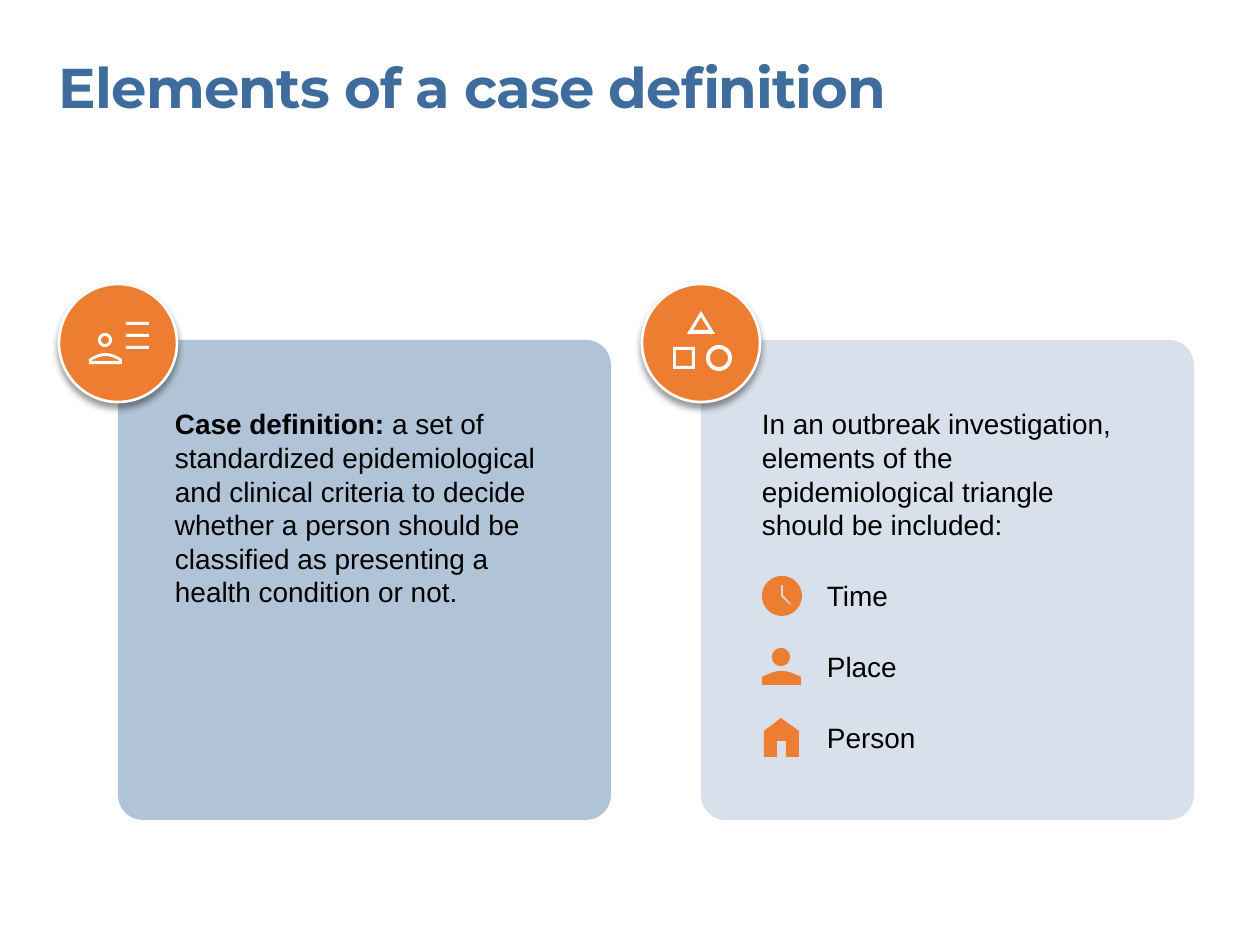
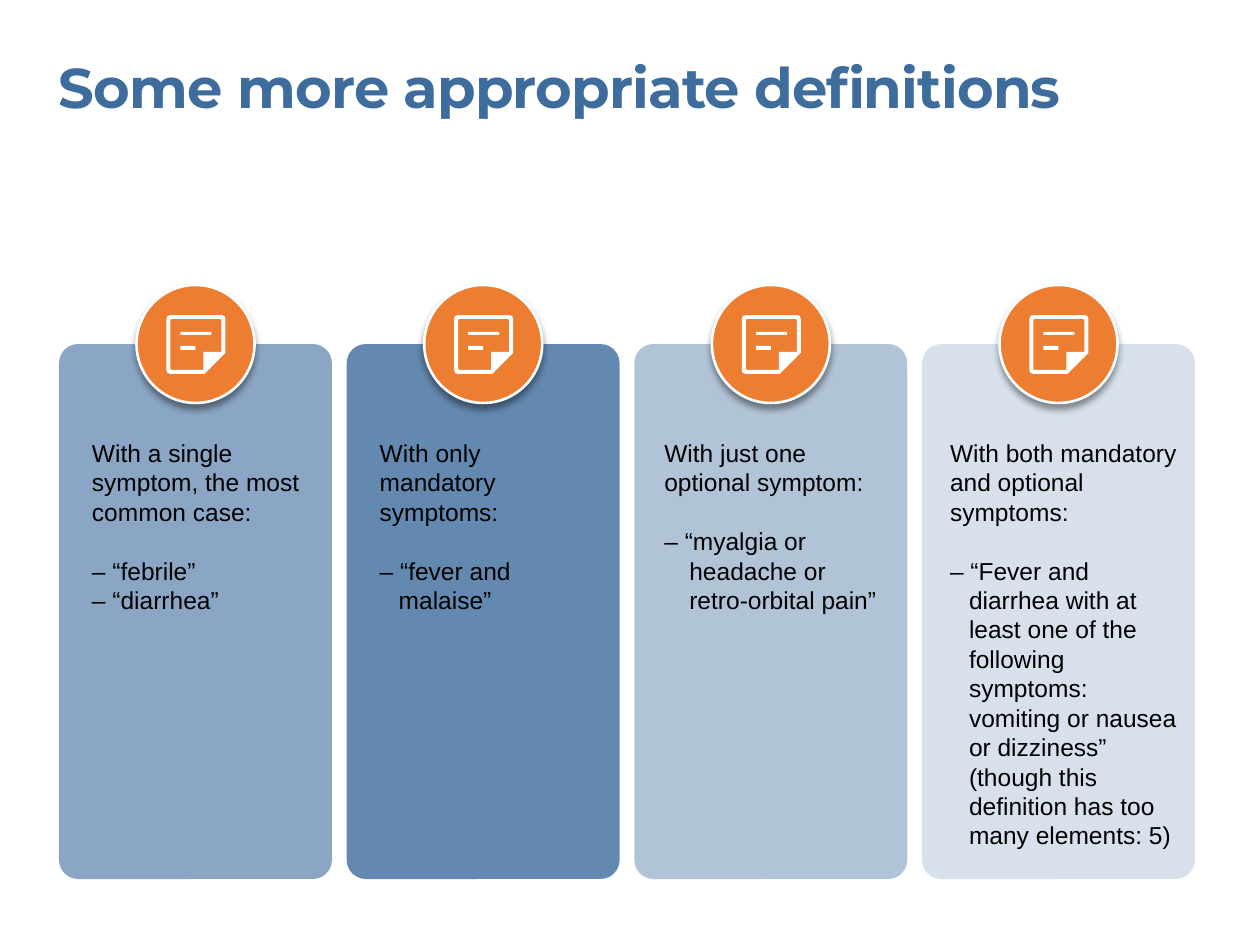
from math import cos, pi, sin

from lxml.etree import SubElement
from pptx import Presentation
from pptx.dml.color import RGBColor
from pptx.enum.shapes import MSO_SHAPE
from pptx.oxml.ns import qn
from pptx.util import Emu, Pt

EMU_PER_PX = 914400 / 126
BLUE = RGBColor(0x3D, 0x6C, 0x9D)
ORANGE = RGBColor(0xED, 0x7D, 0x31)
WHITE = RGBColor(0xFF, 0xFF, 0xFF)
BLACK = RGBColor(0, 0, 0)

TITLE_FONT = {"name": "Montserrat", "size": Pt(32), "bold": True}
BODY_FONT = {"name": "Arial", "bold": False}
BADGE = 118


def px(n):
    return Emu(round(n * EMU_PER_PX))


# Outlines: lists of points in px

def rect(x, y, w, h):
    return [(x, y), (x + w, y), (x + w, y + h), (x, y + h)]


def disc(cx, cy, r, steps=40):
    angles = [2 * pi * i / steps for i in range(steps)]
    return [(cx + r * cos(a), cy + r * sin(a)) for a in angles]


def dome(x, y, w, h, rise, steps=20):
    """Block whose top edge bulges upwards by rise."""
    top = [(x + w * i / steps, y + rise * (1 - sin(pi * i / steps)))
           for i in range(steps + 1)]
    return [(x, y + h)] + top + [(x + w, y + h)]


PERSON_LIST = [
    *(rect(67, y, 23, 3) for y in (38, 50, 62)),
    disc(46, 56, 7), disc(46, 56, 4),
    dome(30, 69, 33, 11, 6), dome(33, 72, 27, 5, 4),
]
BASIC_SHAPES = [
    [(45, 50), (59, 27), (73, 50)], [(51, 46), (59, 33), (67, 46)],
    disc(77, 74, 13), disc(77, 74, 9),
    rect(31, 63, 22, 22), rect(34, 66, 16, 16),
]
NOTE = [
    [(34, 89), (31, 88), (30, 85), (30, 34), (31, 31), (34, 30), (85, 30),
     (88, 31), (89, 34), (89, 68), (68, 89)],
    [(35, 85), (34, 84), (34, 35), (35, 34), (84, 34), (85, 35), (85, 67),
     (67, 67), (67, 85)],
    rect(44, 61, 15, 4), rect(44, 47, 31, 3),
]
CLOCK = [
    disc(20, 21, 20),
    [(28, 30), (29, 29), (21, 20), (21, 10), (19, 10), (19, 21)],
]
BUST = [disc(19, 11, 9), dome(0, 25, 39, 14, 6)]
HOUSE = [[(2, 40), (2, 14), (19, 1), (37, 14), (37, 40), (24, 40),
          (24, 24), (15, 24), (15, 40)]]

TRIANGLE_ROWS = [("Time", CLOCK), ("Place", BUST), ("Person", HOUSE)]

# Opacity, text inset, text width, hanging indent, heading, examples
DEFINITIONS = [
    (60, 33, 212, 0, "With a single symptom, the most common case:",
     ["– “febrile”", "– “diarrhea”"]),
    (80, 33, 208, 19, "With only mandatory symptoms:",
     ["– “fever and malaise”"]),
    (40, 30, 218, 25, "With just one optional symptom:",
     ["– “myalgia or headache or retro-orbital pain”"]),
    (20, 28, 233, 19, "With both mandatory and optional symptoms:",
     ["– “Fever and diarrhea with at least one of the following symptoms: "
      "vomiting or nausea or dizziness” (though this definition has too "
      "many elements: 5)"]),
]


def add_text_box(s, x, y, w, h):
    tf = s.shapes.add_textbox(px(x), px(y), px(w), px(h)).text_frame
    tf.word_wrap = True
    for side in ("left", "top", "right", "bottom"):
        setattr(tf, f"margin_{side}", 0)
    return tf


def add_run(p, text, color=BLACK, **font):
    r = p.add_run()
    r.text = text
    for key, value in font.items():
        setattr(r.font, key, value)
    r.font.color.rgb = color
    return r


def add_body_run(p, text, size, **font):
    p.line_spacing = Pt(size * 1.2)
    add_run(p, text, **{**BODY_FONT, "size": Pt(size), **font})


def add_title(s, text):
    tf = add_text_box(s, 59, 53, 1077, 68)
    r = add_run(tf.paragraphs[0], text, BLUE, **TITLE_FONT)
    r._r.get_or_add_rPr().set("spc", "-50")


def set_alpha(color_element, percent):
    SubElement(color_element, qn("a:alpha"), val=str(percent * 1000))


def add_panel(s, x, y, w, h, corner, opacity):
    sp = s.shapes.add_shape(MSO_SHAPE.ROUNDED_RECTANGLE,
                            px(x), px(y), px(w), px(h))
    sp.adjustments[0] = corner
    sp.shadow.inherit = False
    sp.fill.solid()
    sp.fill.fore_color.rgb = BLUE
    set_alpha(sp._element.spPr.find(".//" + qn("a:srgbClr")), opacity)
    sp.line.fill.background()


def add_icon(s, x, y, outlines, color):
    """One freeform; an outline inside another cuts a hole in it."""
    builder = None
    for outline in outlines:
        start, *rest = [(px(x + dx), px(y + dy)) for dx, dy in outline]
        if builder is None:
            builder = s.shapes.build_freeform(*start, scale=1.0)
        else:
            builder.move_to(*start)
        builder.add_line_segments(rest, close=True)
    sp = builder.convert_to_shape()
    sp.shadow.inherit = False
    sp.fill.solid()
    sp.fill.fore_color.rgb = color
    sp.line.fill.background()


def add_badge(s, x, y, outlines):
    sp = s.shapes.add_shape(MSO_SHAPE.OVAL, px(x), px(y), px(BADGE), px(BADGE))
    sp.fill.solid()
    sp.fill.fore_color.rgb = ORANGE
    sp.line.color.rgb = WHITE
    sp.line.width = Pt(1.5)
    sp.shadow.inherit = False
    effects = sp._element.spPr.find(qn("a:effectLst"))
    shadow = SubElement(effects, qn("a:outerShdw"), blurRad=str(Pt(4)),
                        dist=str(Pt(3)), dir="5400000", rotWithShape="0")
    set_alpha(SubElement(shadow, qn("a:srgbClr"), val=str(BLACK)), 40)
    add_icon(s, x, y, outlines, WHITE)


def add_element_card(s, x, y, opacity, icon):
    add_panel(s, x, y, 493, 480, 0.052, opacity)
    add_badge(s, x - BADGE / 2, y - 56, icon)


def add_triangle_row(s, x, y, label, icon):
    add_icon(s, x, y, icon, ORANGE)
    tf = add_text_box(s, x + 65, y + 4, 267, 34)
    add_body_run(tf.paragraphs[0], label, 16)


def build_elements_slide(s):
    add_title(s, "Elements of a case definition")
    left, right, top = 118, 701, 340

    add_element_card(s, left, top, 40, PERSON_LIST)
    p = add_text_box(s, left + 57, top + 67, 379, 204).paragraphs[0]
    add_body_run(p, "Case definition: ", 16, bold=True)
    add_body_run(p, "a set of standardized epidemiological and clinical "
                 "criteria to decide whether a person should be classified "
                 "as presenting a health condition or not.", 16)

    add_element_card(s, right, top, 20, BASIC_SHAPES)
    p = add_text_box(s, right + 61, top + 67, 368, 136).paragraphs[0]
    add_body_run(p, "In an outbreak investigation, elements of the "
                 "epidemiological triangle should be included:", 16)
    for i, (label, icon) in enumerate(TRIANGLE_ROWS):
        add_triangle_row(s, right + 61, top + 235 + 71 * i, label, icon)


def add_definition_card(s, x, y, w, h, definition):
    opacity, inset, text_w, hanging, heading, examples = definition
    add_panel(s, x, y, w, h, 0.07, opacity)
    add_badge(s, x + (w - BADGE) / 2, y - BADGE / 2, NOTE)
    tf = add_text_box(s, x + inset, y + 94, text_w, h - 120)
    add_body_run(tf.paragraphs[0], heading, 14)
    for i, example in enumerate(examples):
        p = tf.add_paragraph()
        add_body_run(p, example, 14)
        p.space_before = Pt(0 if i else 16.8)
        pPr = p._p.get_or_add_pPr()
        pPr.set("marL", str(px(hanging)))
        pPr.set("indent", str(px(-hanging)))


def build_definitions_slide(s):
    add_title(s, "Some more appropriate definitions")
    left, width, card_w = 59, 1136, 273
    pitch = (width - card_w) / (len(DEFINITIONS) - 1)
    for i, definition in enumerate(DEFINITIONS):
        add_definition_card(s, left + pitch * i, 344, card_w, 535, definition)


def main():
    prs = Presentation()
    prs.slide_width, prs.slide_height = px(1260), px(945)
    for build in (build_elements_slide, build_definitions_slide):
        build(prs.slides.add_slide(prs.slide_layouts[6]))
    prs.save("out.pptx")


if __name__ == "__main__":
    main()
